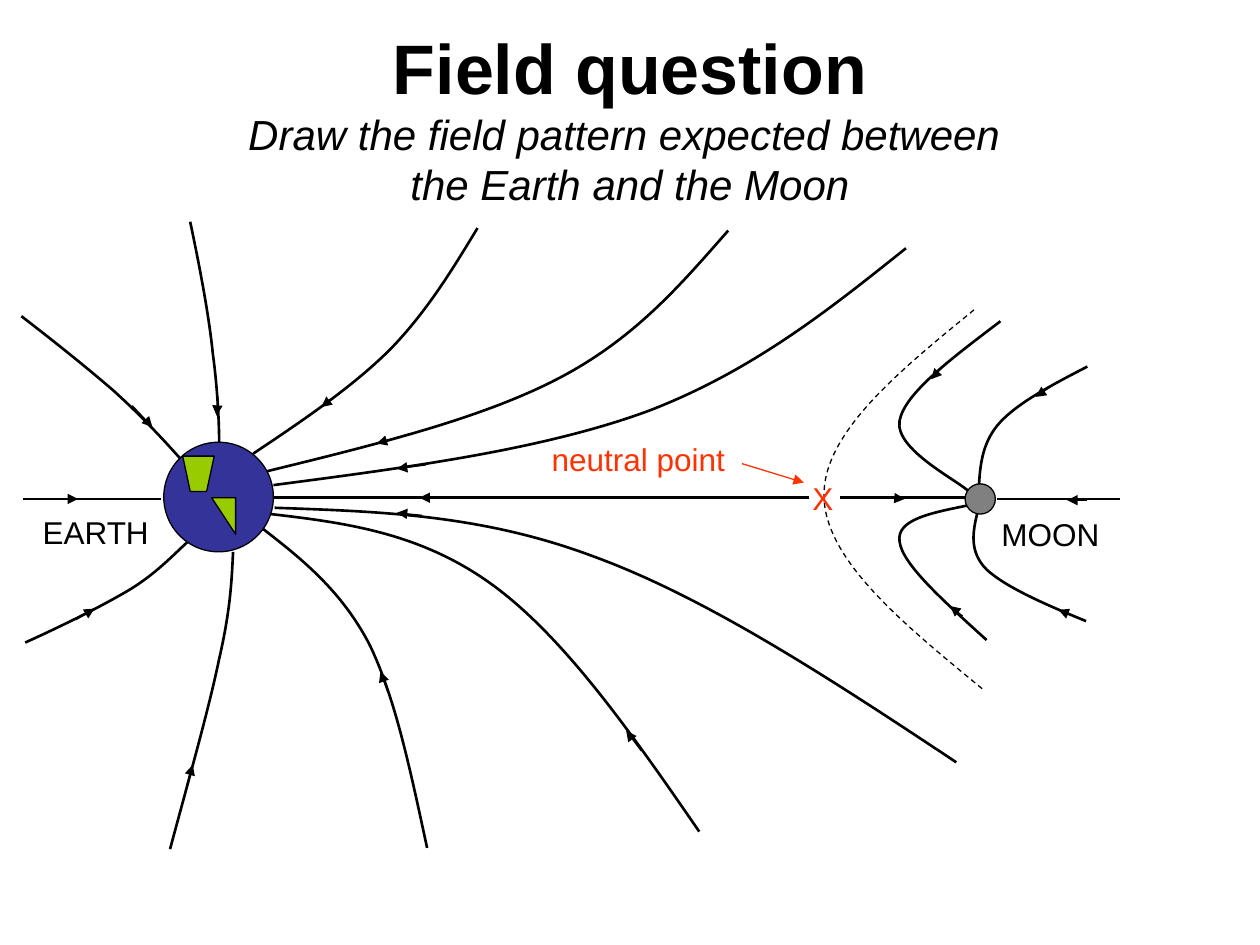
from lxml import etree
from pptx import Presentation
from pptx.dml.color import RGBColor
from pptx.enum.dml import MSO_LINE
from pptx.enum.shapes import MSO_CONNECTOR, MSO_SHAPE
from pptx.enum.text import MSO_ANCHOR, PP_ALIGN
from pptx.oxml.ns import qn
from pptx.util import Inches, Pt

BLACK = RGBColor(0x00, 0x00, 0x00)
RED = RGBColor(0xFF, 0x33, 0x00)
GREY = RGBColor(0x80, 0x80, 0x80)
SEA = RGBColor(0x33, 0x33, 0x99)
LAND = RGBColor(0x99, 0xCC, 0x00)
FONT = "Arial"
THIN, THICK = 0.75, 1.5

# Each field line: its Bezier points (inches), then the arrow's tail and tip.
EARTH_CURVES = [
    ([(7.19, 1.97), (6.59, 2.45), (5.98, 2.94), (5.15, 3.26), (4.31, 3.57), (3.24, 3.71), (2.17, 3.85)],
     ((3.38, 3.69), (3.15, 3.72))),
    ([(5.78, 1.83), (5.41, 2.25), (5.05, 2.68), (4.44, 3), (3.83, 3.32), (2.98, 3.53), (2.12, 3.74)],
     ((3.26, 3.44), (2.99, 3.52))),
    ([(3.79, 1.81), (3.59, 2.14), (3.39, 2.47), (3.1, 2.77), (2.8, 3.07), (2.4, 3.34), (2.01, 3.6)],
     ((2.77, 3.06), (2.55, 3.23))),
    ([(1.51, 1.76), (1.59, 2.14), (1.66, 2.51), (1.69, 2.81), (1.73, 3.1), (1.74, 3.39), (1.74, 3.51)],
     ((1.73, 3.15), (1.72, 3.3))),
    ([(0.17, 2.51), (0.43, 2.71), (0.68, 2.91), (0.9, 3.1), (1.11, 3.29), (1.28, 3.47), (1.44, 3.65)],
     ((1.05, 3.22), (1.21, 3.39))),
    ([(0.2, 5.1), (0.51, 4.96), (0.81, 4.81), (1.03, 4.68), (1.24, 4.55), (1.36, 4.42), (1.49, 4.3)],
     ((0.6, 4.92), (0.75, 4.83))),
    ([(1.35, 6.74), (1.5, 6.18), (1.66, 5.62), (1.74, 5.23), (1.83, 4.84), (1.84, 4.6), (1.85, 4.38)],
     ((1.48, 6.24), (1.53, 6.07))),
    ([(7.59, 6.05), (6.61, 5.4), (5.62, 4.75), (4.72, 4.42), (3.82, 4.08), (3, 4.06), (2.18, 4.03)],
     ((3.35, 4.09), (3.15, 4.07))),
    ([(5.55, 6.6), (5.02, 5.83), (4.49, 5.07), (3.92, 4.65), (3.35, 4.23), (2.75, 4.15), (2.15, 4.08)],
     ((5.09, 5.96), (4.97, 5.8))),
    ([(3.39, 6.73), (3.26, 6.13), (3.14, 5.54), (2.93, 5.11), (2.71, 4.69), (2.4, 4.44), (2.09, 4.2)],
     ((3.08, 5.5), (3.02, 5.33))),
]
MOON_CURVES = [
    ([(8.63, 2.91), (8.36, 3.05), (8.09, 3.19), (7.94, 3.35), (7.8, 3.5), (7.78, 3.68), (7.77, 3.85)],
     ((8.38, 3.04), (8.22, 3.15))),
    ([(7.94, 2.55), (7.56, 2.84), (7.18, 3.12), (7.14, 3.34), (7.1, 3.57), (7.6, 3.81), (7.7, 3.91)],
     ((7.5, 2.89), (7.39, 3.01))),
    ([(7.83, 5.08), (7.5, 4.78), (7.16, 4.48), (7.14, 4.3), (7.11, 4.12), (7.4, 4.07), (7.69, 4.01)],
     ((7.64, 4.89), (7.54, 4.81))),
    ([(8.62, 4.93), (8.3, 4.8), (7.98, 4.66), (7.83, 4.52), (7.69, 4.38), (7.72, 4.22), (7.76, 4.06)],
     ((8.5, 4.88), (8.4, 4.84))),
]
AXIS_LINES = [
    ([(3.35, 3.95), (2.15, 3.95)], None),
    ([(6.67, 3.95), (7.68, 3.95)], ((7.06, 3.95), (7.18, 3.96))),
    ([(8.89, 3.96), (7.91, 3.96)], ((8.63, 3.97), (8.47, 3.97))),
    ([(1.28, 3.96), (0.18, 3.96)], ((0.47, 3.96), (0.62, 3.96))),
]
NEUTRAL_BOUNDARY = [(7.73, 2.46), (7.13, 2.95), (6.53, 3.44), (6.54, 3.94),
                    (6.55, 4.45), (7.18, 4.96), (7.8, 5.47)]


def style(sp, fill=None, width=THIN):
    sp.shadow.inherit = False
    if fill is None:
        sp.fill.background()
    else:
        sp.fill.solid()
        sp.fill.fore_color.rgb = fill
    sp.line.color.rgb = BLACK
    sp.line.width = Pt(width)


def add_outline(shapes, points, closed):
    pts = [(Inches(x), Inches(y)) for x, y in points]
    builder = shapes.build_freeform(*pts[0])
    builder.add_line_segments(pts[1:], close=closed)
    return builder.convert_to_shape()


def add_curve(shapes, points, width=THICK):
    """Draw an open Bezier curve: a start, then two controls and an end per piece."""
    sp = add_outline(shapes, points, closed=False)
    style(sp, width=width)
    outline = sp.element.find(".//" + qn("a:path"))
    segments = outline.findall(qn("a:lnTo"))
    for i in range(0, len(segments), 3):
        bezier = etree.SubElement(outline, qn("a:cubicBezTo"))
        for segment in segments[i:i + 3]:
            bezier.append(segment[0])
            outline.remove(segment)
    return sp


def add_straight(shapes, start, end, width=THIN, color=BLACK, arrow=True):
    line = shapes.add_connector(MSO_CONNECTOR.STRAIGHT,
                                *(Inches(v) for v in (*start, *end)))
    line.line.color.rgb = color
    line.line.width = Pt(width)
    if arrow:
        etree.SubElement(line.line._get_or_add_ln(), qn("a:tailEnd"), type="triangle")
    etree.SubElement(line.element.spPr, qn("a:effectLst"))


def add_label(shapes, text, left, top, width, color=BLACK):
    tf = shapes.add_textbox(Inches(left), Inches(top), Inches(width), Inches(0.4)).text_frame
    tf.word_wrap = True
    p = tf.paragraphs[0]
    p.text = text
    p.font.name, p.font.size = FONT, Pt(18)
    p.font.color.rgb = color


def add_title(shapes, left, top, width, height):
    tf = shapes.add_textbox(Inches(left), Inches(top), Inches(width), Inches(height)).text_frame
    tf.word_wrap = True
    tf.vertical_anchor = MSO_ANCHOR.MIDDLE
    p = tf.paragraphs[0]
    p.alignment = PP_ALIGN.CENTER
    p.font.name = FONT
    lines = [("Field question", 40, True),
             ("Draw the field pattern expected between ", 24, False),
             ("the Earth and the Moon", 24, False)]
    for i, (text, size, heading) in enumerate(lines):
        if i:
            p.add_line_break()
        r = p.add_run()
        r.text = text
        r.font.name, r.font.size = FONT, Pt(size)
        r.font.bold, r.font.italic = heading, not heading
        r.font.color.rgb = BLACK


def add_field(shapes):
    add_straight(shapes, (6.42, 3.95), (3.33, 3.95), THICK)
    add_curve(shapes, NEUTRAL_BOUNDARY, THIN).line.dash_style = MSO_LINE.DASH
    for points, arrow in AXIS_LINES + EARTH_CURVES + MOON_CURVES:
        if len(points) == 2:
            add_straight(shapes, *points, width=THICK, arrow=False)
        else:
            add_curve(shapes, points)
        if arrow:
            add_straight(shapes, *arrow)


def add_globe(shapes, left, top, size, fill):
    sp = shapes.add_shape(MSO_SHAPE.OVAL, Inches(left), Inches(top), Inches(size), Inches(size))
    style(sp, fill)


def add_earth(shapes, left, top, size):
    add_globe(shapes, left, top, size, SEA)
    corners = [(0.15, 0.11), (0.21, 0.39), (0.34, 0.39), (0.4, 0.11)]
    north = add_outline(shapes, [(left + x, top + y) for x, y in corners], closed=True)
    style(north, LAND)
    south = shapes.add_shape(MSO_SHAPE.RIGHT_TRIANGLE, Inches(left + 0.38), Inches(top + 0.44),
                             Inches(0.19), Inches(0.29))
    south.rotation = 180
    style(south, LAND)
    add_label(shapes, "EARTH", left - 1.06, top + 0.51, 1.2)


def add_moon(shapes, left, top, size):
    add_globe(shapes, left, top, size, GREY)
    add_label(shapes, "MOON", left + 0.19, top + 0.2, 1.2)


def add_neutral_point(shapes, left, top):
    add_label(shapes, "X", left + 2.07, top + 0.31, 0.44, RED)
    add_label(shapes, "neutral point", left, top, 1.66, RED)
    add_straight(shapes, (left + 1.61, top + 0.24), (left + 2.1, top + 0.39), color=RED)


def main():
    prs = Presentation()
    prs.slide_width, prs.slide_height = Inches(10), Inches(7.5)
    s = prs.slides.add_slide(prs.slide_layouts[6])
    add_title(s.shapes, 0.5, 0.3, 9, 1.25)
    diagram = s.shapes.add_group_shape().shapes
    add_field(diagram)
    add_moon(diagram, 7.66, 3.84, 0.24)
    add_earth(diagram, 1.3, 3.51, 0.87)
    add_neutral_point(diagram, 4.28, 3.44)
    prs.save("out.pptx")


if __name__ == "__main__":
    main()
